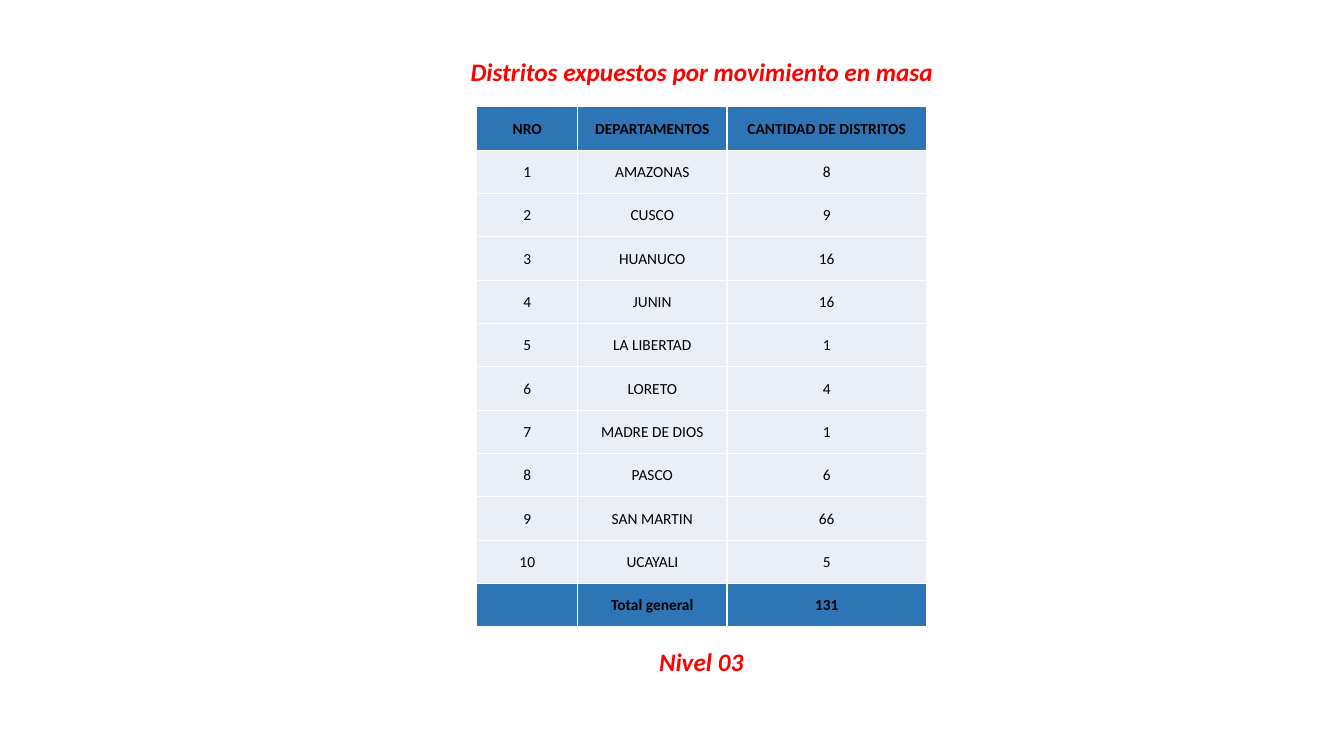
from lxml.etree import SubElement
from pptx import Presentation
from pptx.dml.color import RGBColor
from pptx.enum.text import MSO_ANCHOR, MSO_AUTO_SIZE, PP_ALIGN
from pptx.oxml.ns import qn
from pptx.util import Inches, Pt

RED, BLACK, WHITE = "FF0000", "000000", "FFFFFF"
BLUE, PALE_BLUE = "2E75B6", "EAEFF7"

HEADER = ("NRO", "DEPARTAMENTOS", "CANTIDAD DE DISTRITOS")
DISTRICTS = (
    ("AMAZONAS", 8),
    ("CUSCO", 9),
    ("HUANUCO", 16),
    ("JUNIN", 16),
    ("LA LIBERTAD", 1),
    ("LORETO", 4),
    ("MADRE DE DIOS", 1),
    ("PASCO", 6),
    ("SAN MARTIN", 66),
    ("UCAYALI", 5),
)
TOTAL = ("", "Total general", 131)
COLUMN_WIDTHS = (1, 1.48, 1.98)
ROW_HEIGHT = 0.43


def color(hex_string):
    return RGBColor.from_string(hex_string)


def write_text(text_frame, text, size=11, color_hex=BLACK, bold=False, italic=False):
    paragraph = text_frame.paragraphs[0]
    paragraph.alignment = PP_ALIGN.CENTER
    if text == "":
        return
    run = paragraph.add_run()
    run.text = str(text)
    font = run.font
    font.name = "Calibri"
    font.size = Pt(size)
    font.bold = bold
    font.italic = italic
    font.color.rgb = color(color_hex)


def format_caption(shape, text, left, top, width, height, wrap):
    shape.left, shape.top = Inches(left), Inches(top)
    shape.width, shape.height = Inches(width), Inches(height)
    text_frame = shape.text_frame
    text_frame.word_wrap = wrap
    text_frame.auto_size = MSO_AUTO_SIZE.SHAPE_TO_FIT_TEXT
    text_frame.vertical_anchor = MSO_ANCHOR.TOP
    write_text(text_frame, text, size=18, color_hex=RED, bold=True, italic=True)


def add_borders(cell, color_hex, width):
    properties = cell._tc.get_or_add_tcPr()
    for side in ("a:lnL", "a:lnR", "a:lnT", "a:lnB"):
        line = SubElement(properties, qn(side), w=str(Pt(width)))
        fill = SubElement(line, qn("a:solidFill"))
        SubElement(fill, qn("a:srgbClr"), val=color_hex)


def format_cell(cell, text, fill_hex, bold):
    add_borders(cell, WHITE, 1)
    cell.fill.solid()
    cell.fill.fore_color.rgb = color(fill_hex)
    cell.margin_left = cell.margin_right = cell.margin_top = Inches(0.01)
    cell.margin_bottom = 0
    cell.vertical_anchor = MSO_ANCHOR.MIDDLE
    write_text(cell.text_frame, text, bold=bold)


def add_district_table(slide, left, top):
    numbered = [(number, *district) for number, district in enumerate(DISTRICTS, 1)]
    rows = [HEADER, *numbered, TOTAL]
    table = slide.shapes.add_table(
        len(rows), len(HEADER), Inches(left), Inches(top),
        Inches(sum(COLUMN_WIDTHS)), Inches(ROW_HEIGHT * len(rows)),
    ).table
    for column, width in zip(table.columns, COLUMN_WIDTHS):
        column.width = Inches(width)
    for row, values in zip(table.rows, rows):
        row.height = Inches(ROW_HEIGHT)
        emphasized = values in (HEADER, TOTAL)
        for cell, value in zip(row.cells, values):
            format_cell(cell, value, BLUE if emphasized else PALE_BLUE, emphasized)


def main():
    presentation = Presentation()
    presentation.slide_width = Inches(13.33)
    presentation.slide_height = Inches(7.5)
    slide = presentation.slides.add_slide(presentation.slide_layouts[5])
    format_caption(slide.shapes.title, "Distritos expuestos por movimiento en masa",
                   4.54, 0.51, 4.84, 0.4, wrap=False)
    level = slide.shapes.add_textbox(0, 0, 0, 0)
    format_caption(level, "Nivel 03", 6.42, 6.36, 1.07, 0.4, wrap=True)
    add_district_table(slide, 4.73, 1.06)
    presentation.save("out.pptx")


if __name__ == "__main__":
    main()
